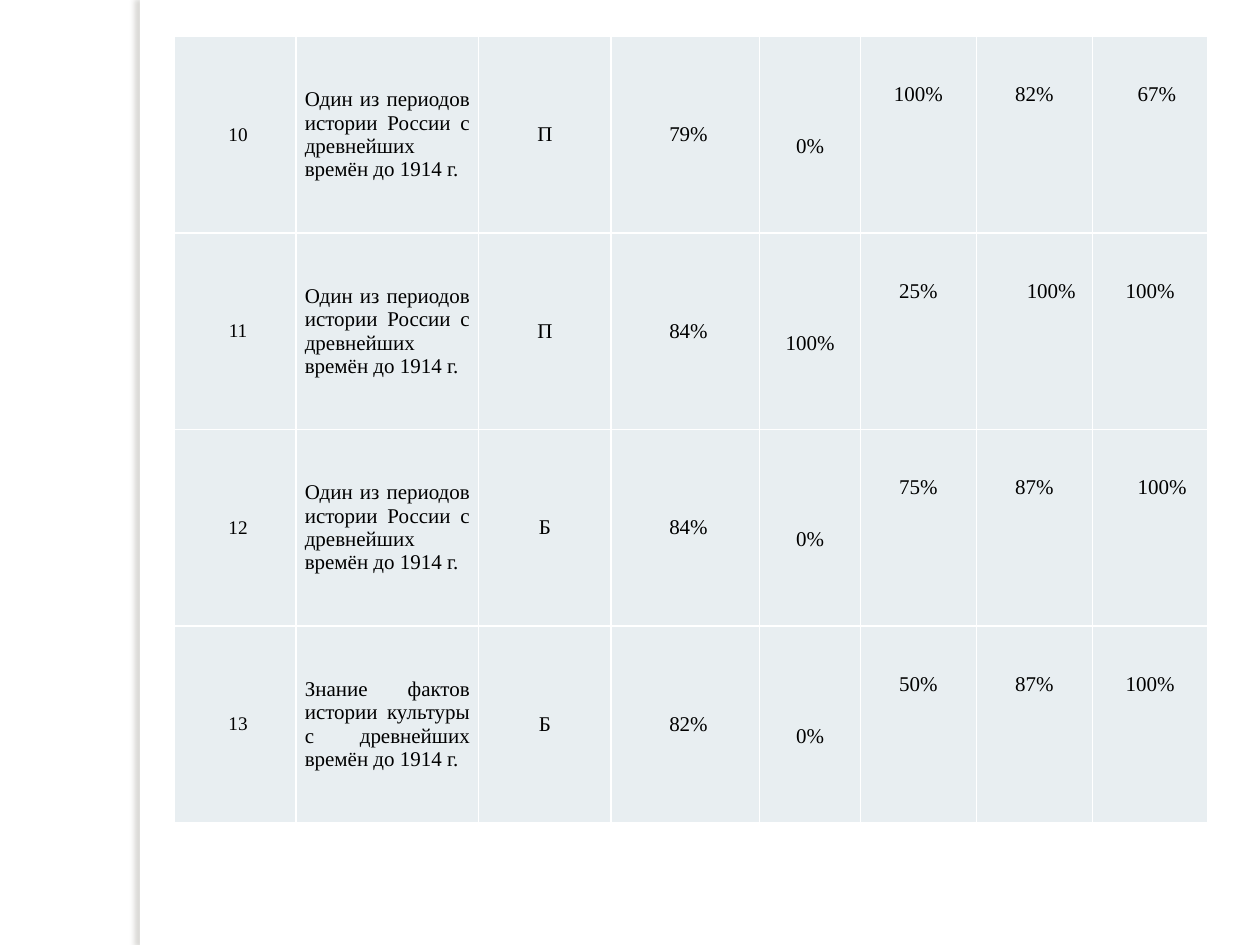
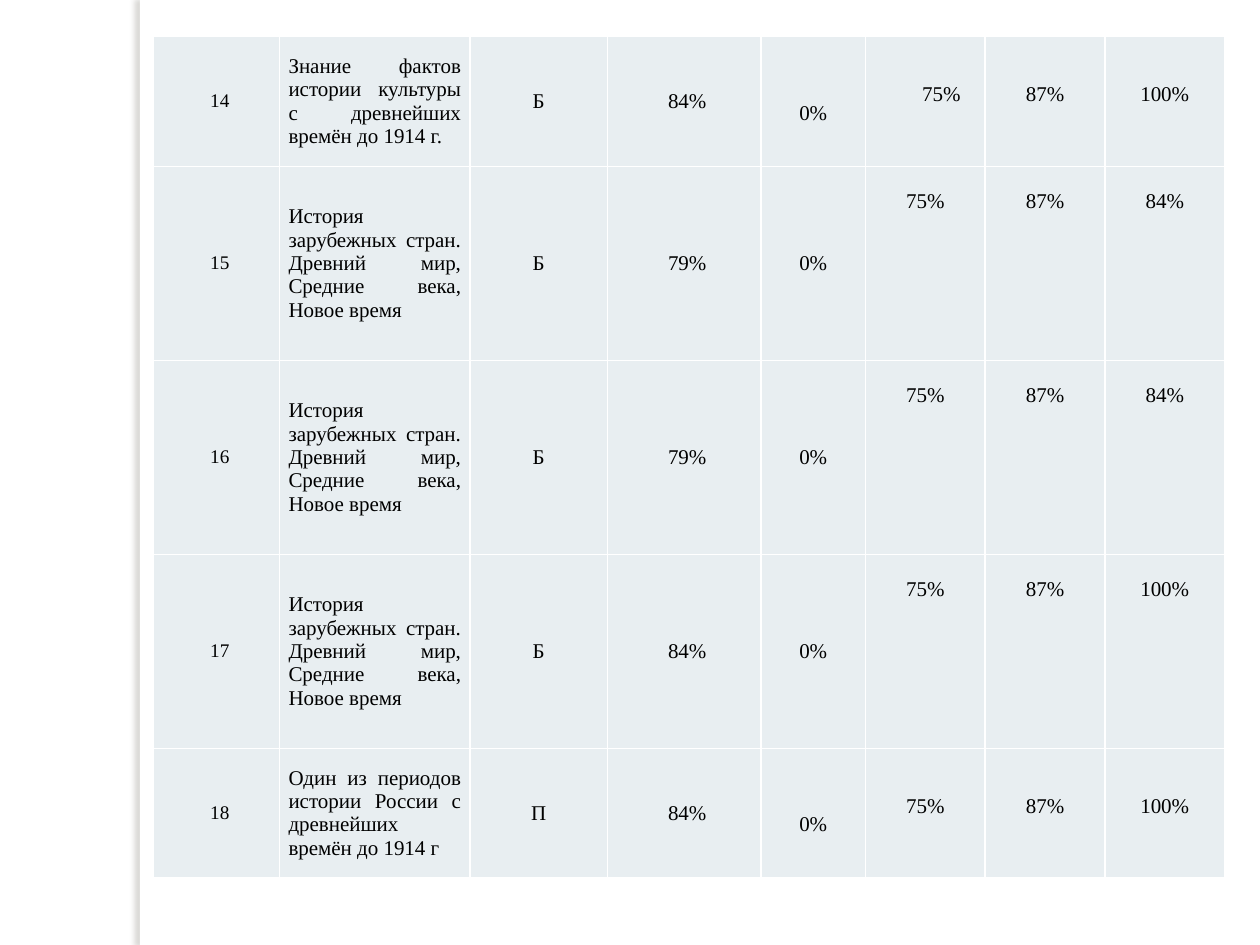
from lxml.etree import SubElement
from pptx import Presentation
from pptx.dml.color import RGBColor
from pptx.enum.shapes import MSO_SHAPE
from pptx.enum.text import MSO_ANCHOR, PP_ALIGN
from pptx.oxml import parse_xml
from pptx.oxml.ns import nsdecls, qn
from pptx.util import Inches, Pt

WHITE = "FFFFFF"
CELL_FILL = "E8EEF1"
SHADOW = "736F63"
TEXT = "000000"
FONT = "Times New Roman"
LINE = 0.185  # height of one 12 pt line, in inches

PERIOD = "Один из периодов истории России с древнейших времён до 1914 г."
CULTURE = "Знание фактов истории культуры с древнейших времён до 1914 г."
WORLD = "История зарубежных стран. Древний мир, Средние века, Новое время"

# Each row: lines the first mark is lowered by, then the eight cell texts
pages = [
    {
        "left": 1.38,
        "columns": [0.97, 1.45, 1.05, 1.18, 0.8, 0.92, 0.92, 0.92],
        "heights": [1.56] * 4,
        "rows": [
            (1, ["10", PERIOD, "П", "79%", "0%", "100%", "82%", "67%"]),
            (1, ["11", PERIOD, "П", "84%", "100%", "25%", "100%", "100%"]),
            (1, ["12", PERIOD, "Б", "84%", "0%", "75%", "87%", "100%"]),
            (1, ["13", CULTURE, "Б", "82%", "0%", "50%", "87%", "100%"]),
        ],
    },
    {
        "left": 1.22,
        "columns": [1, 1.51, 1.09, 1.22, 0.83, 0.95, 0.95, 0.95],
        "heights": [1.03, 1.54, 1.54, 1.54, 1.03],
        "rows": [
            (1, ["14", CULTURE, "Б", "84%", "0%", "75%", "87%", "100%"]),
            (0, ["15", WORLD, "Б", "79%", "0%", "75%", "87%", "84%"]),
            (0, ["16", WORLD, "Б", "79%", "0%", "75%", "87%", "84%"]),
            (0, ["17", WORLD, "Б", "84%", "0%", "75%", "87%", "100%"]),
            (1, ["18", PERIOD.rstrip("."), "П", "84%", "0%", "75%", "87%", "100%"]),
        ],
    },
]

# Marks set from the left edge instead of centred: (task, column) -> indent
left_indents = {("10", 7): 0.29, ("11", 6): 0.33, ("12", 7): 0.29, ("14", 5): 0.38}


def color(value):
    return RGBColor.from_string(value)


def add_borders(cell):
    properties = cell._tc.get_or_add_tcPr()
    for side in ("lnL", "lnR", "lnT", "lnB"):
        border = SubElement(properties, qn(f"a:{side}"), w=str(Pt(1)))
        fill = SubElement(border, qn("a:solidFill"))
        SubElement(fill, qn("a:srgbClr"), val=WHITE)


prs = Presentation()
prs.slide_width, prs.slide_height = Inches(10), Inches(7.5)

for page in pages:
    slide = prs.slides.add_slide(prs.slide_layouts[6])
    slide.background.fill.solid()
    slide.background.fill.fore_color.rgb = color(WHITE)

    band = slide.shapes.add_shape(
        MSO_SHAPE.RECTANGLE, Inches(1.11), 0, Inches(0.08), prs.slide_height)
    band.fill.solid()
    band.fill.fore_color.rgb = color(WHITE)
    band.line.fill.background()
    band._element.spPr.append(parse_xml(
        f'<a:effectLst {nsdecls("a")}>'
        f'<a:outerShdw blurRad="{Pt(3)}" dist="{Pt(3)}" dir="10800000" algn="tl" rotWithShape="0">'
        f'<a:srgbClr val="{SHADOW}"><a:alpha val="25000"/></a:srgbClr>'
        '</a:outerShdw></a:effectLst>'))

    columns, heights = page["columns"], page["heights"]
    results = slide.shapes.add_table(
        len(heights), len(columns), Inches(page["left"]), Inches(0.29),
        Inches(sum(columns)), Inches(sum(heights))).table
    results.first_row = results.horz_banding = False
    for column, width in zip(results.columns, columns):
        column.width = Inches(width)

    for row, height, (lowered, texts) in zip(results.rows, heights, page["rows"]):
        row.height = Inches(height)
        for index, (cell, text) in enumerate(zip(row.cells, texts)):
            add_borders(cell)
            cell.fill.solid()
            cell.fill.fore_color.rgb = color(CELL_FILL)
            lines_above = 0 if index < 4 else lowered if index == 4 else lowered + 1
            layout = {
                "margin_left": Inches(0.07),
                "margin_right": Inches(0.07),
                "margin_top": Inches(lines_above * LINE),
                "margin_bottom": 0,
                "vertical_anchor": MSO_ANCHOR.MIDDLE if index < 5 else MSO_ANCHOR.TOP,
            }
            for name, value in layout.items():
                setattr(cell, name, value)

            paragraph = cell.text_frame.paragraphs[0]
            paragraph.alignment = PP_ALIGN.JUSTIFY if index == 1 else PP_ALIGN.CENTER
            if index in (0, 3):
                paragraph._p.get_or_add_pPr().set("indent", str(Inches(0.05)))
            indent = left_indents.get((texts[0], index))
            if indent:
                paragraph.alignment = PP_ALIGN.LEFT
                paragraph._p.get_or_add_pPr().set("marL", str(Inches(indent)))
            run = paragraph.add_run()
            run.text = text
            run.font.name = FONT
            run.font.size = Pt(11 if index == 0 else 12)
            run.font.color.rgb = color(TEXT)

prs.save("out.pptx")
